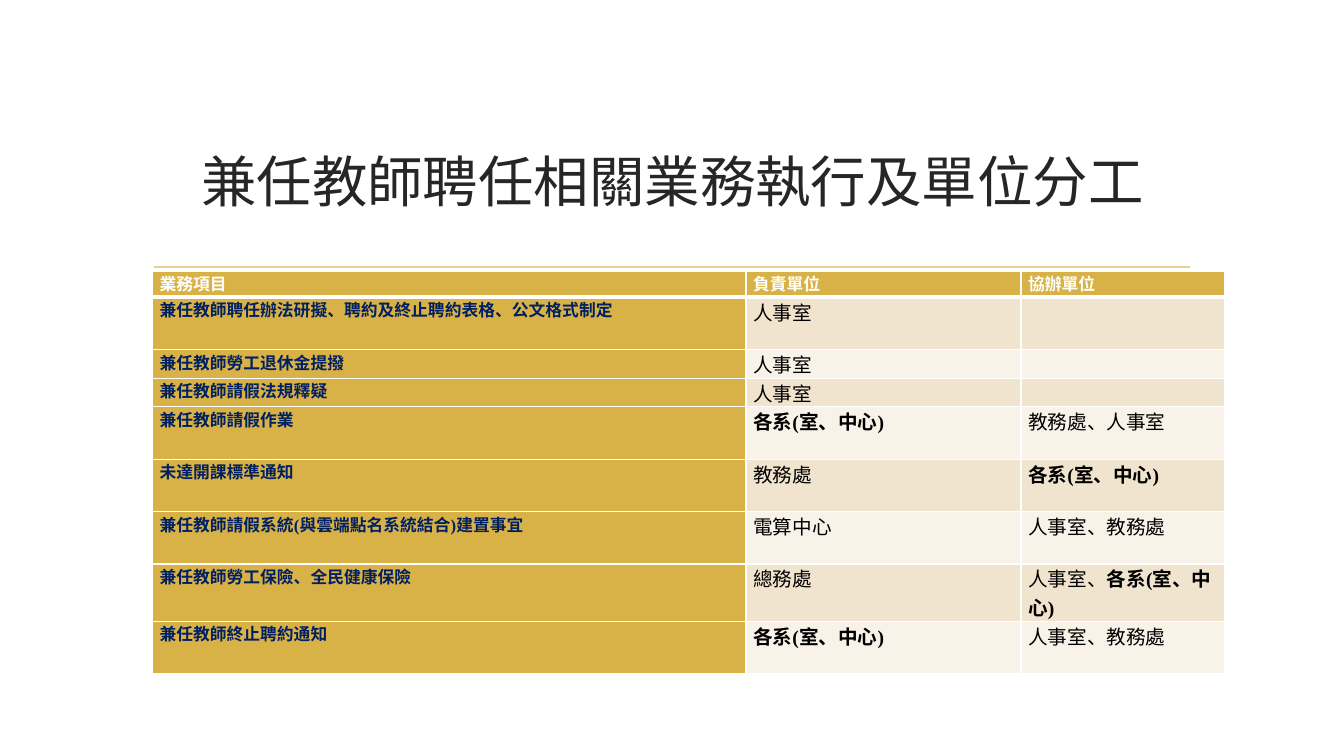
"""Build the slide on part-time teacher hiring tasks and the units in charge."""
from lxml import etree
from pptx import Presentation
from pptx.dml.color import RGBColor
from pptx.enum.shapes import MSO_CONNECTOR
from pptx.enum.text import MSO_ANCHOR, PP_ALIGN
from pptx.oxml.ns import qn
from pptx.util import Cm, Pt

LINE = MSO_CONNECTOR.STRAIGHT
MID, TOP = MSO_ANCHOR.MIDDLE, MSO_ANCHOR.TOP
CENTER = PP_ALIGN.CENTER
HEX = {"ink": "262626", "rule": "E8D191", "gold": "D9B247", "sand": "F1E4CF",
       "cream": "F8F2E9", "navy": "002060", "white": "FFFFFF", "black": "000000"}
SANS, SERIF = "Noto Sans CJK SC", "Times New Roman"
DEPT = "各系(室、中心)"
COLS = (14.96, 6.93, 5.13)
LOW, HIGH = 0.66, 1.32
HEAD = ("業務項目", "負責單位", "協辦單位")
TASKS = [
    (HIGH, "兼任教師聘任辦法研擬、聘約及終止聘約表格、公文格式制定", "人事室", ""),
    (LOW, "兼任教師勞工退休金提撥", "人事室", ""),
    (LOW, "兼任教師請假法規釋疑", "人事室", ""),
    (HIGH, "兼任教師請假作業", DEPT, "教務處、人事室"),
    (HIGH, "未達開課標準通知", "教務處", DEPT),
    (HIGH, "兼任教師請假系統(與雲端點名系統結合)建置事宜", "電算中心", "人事室、教務處"),
    (HIGH, "兼任教師勞工保險、全民健康保險", "總務處", "人事室、" + DEPT),
    (HIGH, "兼任教師終止聘約通知", DEPT, "人事室、教務處"),
]


def color(name):
    """Return the named colour."""
    return RGBColor.from_string(HEX[name])


def style(run, face, size, tint, bold=False):
    """Set the font of a run, with the sans face for Chinese."""
    font = run.font
    font.name, font.size, font.bold = face, Pt(size), bold
    font.color.rgb = color(tint)
    east = etree.SubElement(run._r.get_or_add_rPr(), qn("a:ea"))
    east.set("typeface", SANS)


def add_title(slide, text):
    """Place and format the title."""
    title = slide.shapes.title
    title.left, title.top = Cm(3.61), Cm(2.72)
    title.width, title.height = Cm(26.67), Cm(3.63)
    frame = title.text_frame
    frame.text = text
    frame.word_wrap = True
    frame.vertical_anchor = MID
    para = frame.paragraphs[0]
    para.alignment = CENTER
    style(para.runs[0], SANS, 39.6, "ink")


def add_rule(slide):
    """Draw the thin line below the title."""
    rule = slide.shapes.add_connector(LINE, Cm(3.89), Cm(6.73), Cm(30), Cm(6.73))
    rule.line.color.rgb = color("rule")
    rule.line.width = Pt(1.25)
    etree.SubElement(rule._element.spPr, qn("a:effectLst"))


def add_edges(cell, base):
    """Give a cell white borders, with its own width at the base."""
    props = cell._tc.get_or_add_tcPr()
    for side, width in (("L", 1), ("R", 1), ("T", 1), ("B", base)):
        edge = etree.SubElement(props, qn("a:ln" + side), w=str(Pt(width)))
        fill = etree.SubElement(edge, qn("a:solidFill"))
        etree.SubElement(fill, qn("a:srgbClr"), val=HEX["white"])


def set_cell(cell, parts, size, tint, fill, base=1):
    """Fill a cell with (text, bold) parts."""
    cell.margin_left = cell.margin_right = Cm(0.18)
    cell.margin_top = cell.margin_bottom = 0
    cell.vertical_anchor = TOP
    add_edges(cell, base)
    cell.fill.solid()
    cell.fill.fore_color.rgb = color(fill)
    para = cell.text_frame.paragraphs[0]
    for text, bold in parts:
        run = para.add_run()
        run.text = text
        style(run, SERIF, size, tint, bold)
    if not parts:
        etree.SubElement(para._p, qn("a:endParaRPr"), sz=str(size * 100))


def split(units):
    """Split unit names into parts, with the departments in bold."""
    lead, dept, _ = units.partition(DEPT)
    return [part for part in ((lead, False), (dept, True)) if part[0]]


def add_tasks(slide):
    """Build the table of tasks and units."""
    high = LOW + sum(task[0] for task in TASKS)
    table = slide.shapes.add_table(len(TASKS) + 1, len(COLS), Cm(3.84), Cm(6.83),
                                   Cm(sum(COLS)), Cm(high)).table
    for col, width in zip(table.columns, COLS):
        col.width = Cm(width)
    table.rows[0].height = Cm(LOW)
    for col, text in enumerate(HEAD):
        set_cell(table.cell(0, col), [(text, True)], 12, "white", "gold", 3)
    for row, (tall, task, *units) in enumerate(TASKS, 1):
        table.rows[row].height = Cm(tall)
        set_cell(table.cell(row, 0), [(task, True)], 12, "navy", "gold")
        band = "sand" if row % 2 else "cream"
        for col, unit in enumerate(units, 1):
            set_cell(table.cell(row, col), split(unit), 14, "black", band)


def main():
    """Build and save the slide."""
    deck = Presentation()
    deck.slide_width, deck.slide_height = Cm(33.87), Cm(19.05)
    slide = deck.slides.add_slide(deck.slide_layouts[5])
    add_rule(slide)
    add_title(slide, "兼任教師聘任相關業務執行及單位分工")
    add_tasks(slide)
    deck.save("out.pptx")


if __name__ == "__main__":
    main()
